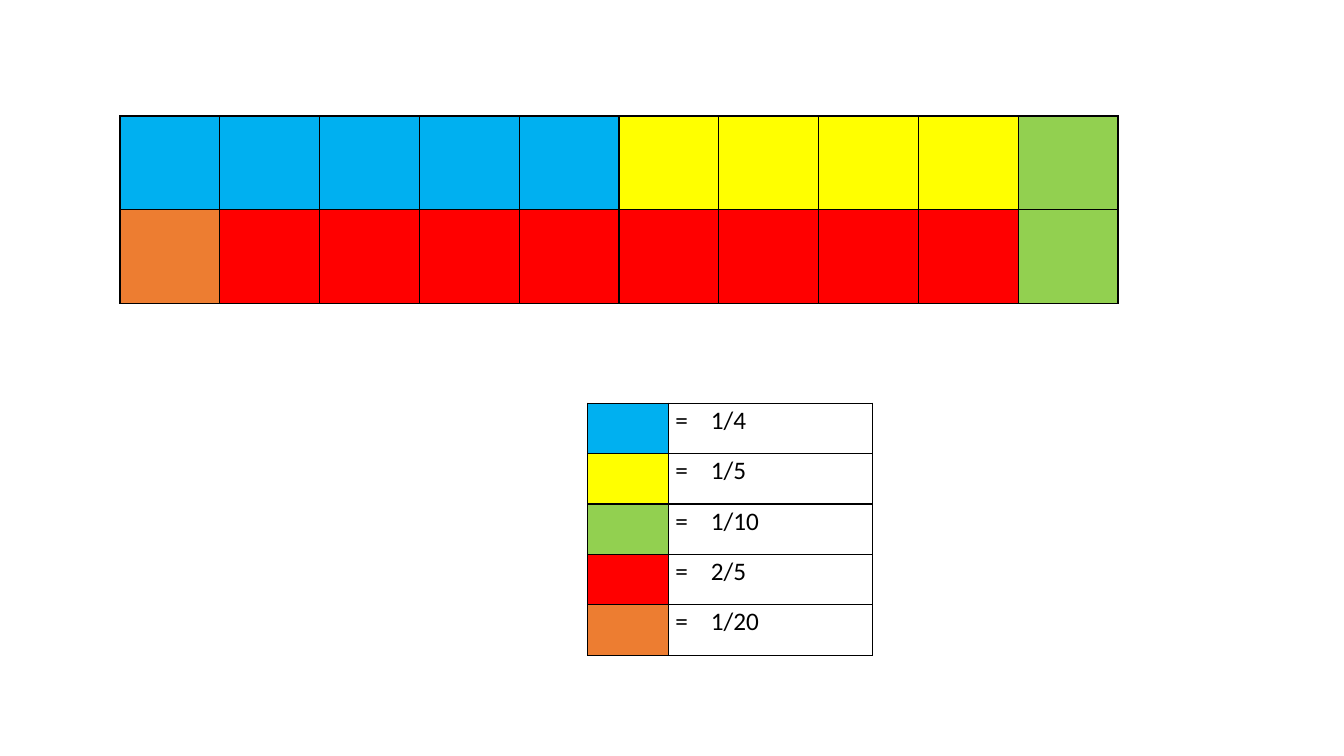
from dataclasses import dataclass

from lxml import etree
from pptx import Presentation
from pptx import util as u
from pptx.dml.color import RGBColor
from pptx.oxml.ns import qn

FRACTIONS = [
    ("blue", "1/4"),
    ("yellow", "1/5"),
    ("green", "1/10"),
    ("red", "2/5"),
    ("orange", "1/20"),
]
BAR_ROWS = [
    ["blue"] * 5 + ["yellow"] * 4 + ["green"],
    ["orange"] + ["red"] * 8 + ["green"],
]


@dataclass(frozen=True)
class Theme:
    blue: str = "00B0F0"
    yellow: str = "FFFF00"
    green: str = "92D050"
    red: str = "FF0000"
    orange: str = "ED7D31"
    ink: str = "000000"
    font: str = "Calibri"
    text_size: int = 18
    line_spacing: float = 1.07
    border: int = 1


THEME = Theme()


def add_borders(cell):
    properties = cell._tc.get_or_add_tcPr()
    for side in ("lnL", "lnR", "lnT", "lnB"):
        line = etree.SubElement(properties, qn(f"a:{side}"), w=str(u.Pt(THEME.border)))
        fill = etree.SubElement(line, qn("a:solidFill"))
        etree.SubElement(fill, qn("a:srgbClr"), val=THEME.ink)


def add_grid(page, left, top, widths, row_height, row_count):
    """Add a plain bordered table with no fill in its cells."""
    frame = page.shapes.add_table(
        row_count, len(widths), u.Inches(left), u.Inches(top),
        u.Inches(sum(widths)), u.Inches(row_height * row_count))
    table = frame.table
    table.first_row = table.horz_banding = False
    for column, width in zip(table.columns, widths):
        column.width = u.Inches(width)
    for row in table.rows:
        row.height = u.Inches(row_height)
    for cell in table.iter_cells():
        add_borders(cell)
        cell.fill.background()
        cell.margin_left = cell.margin_right = u.Inches(0.07)
        cell.margin_top = cell.margin_bottom = 0
    return table


def paint(cell, color_name):
    cell.fill.solid()
    cell.fill.fore_color.rgb = RGBColor.from_string(getattr(THEME, color_name))


def write_value(cell, fraction):
    """Write the equals sign and the fraction, aligned at a tab stop."""
    para = cell.text_frame.paragraphs[0]
    para.text = f"=\t{fraction}"
    para.line_spacing = THEME.line_spacing
    tabs = etree.SubElement(para._p.get_or_add_pPr(), qn("a:tabLst"))
    etree.SubElement(tabs, qn("a:tab"), pos=str(u.Inches(0.35)), algn="l")
    for span in para.runs:
        span.font.name = THEME.font
        span.font.size = u.Pt(THEME.text_size)
        span.font.color.rgb = RGBColor.from_string(THEME.ink)


def main():
    deck = Presentation()
    deck.slide_width, deck.slide_height = u.Inches(13.33), u.Inches(7.5)
    page = deck.slides.add_slide(deck.slide_layouts[6])

    bar = add_grid(page, 1.19, 1.15, [0.99] * len(BAR_ROWS[0]), 0.93, len(BAR_ROWS))
    for row, colors in enumerate(BAR_ROWS):
        for column, color_name in enumerate(colors):
            paint(bar.cell(row, column), color_name)

    legend = add_grid(page, 5.83, 4, [0.8, 2.02], 0.5, len(FRACTIONS))
    for row, (color_name, fraction) in enumerate(FRACTIONS):
        paint(legend.cell(row, 0), color_name)
        write_value(legend.cell(row, 1), fraction)

    deck.save("out.pptx")


if __name__ == "__main__":
    main()
